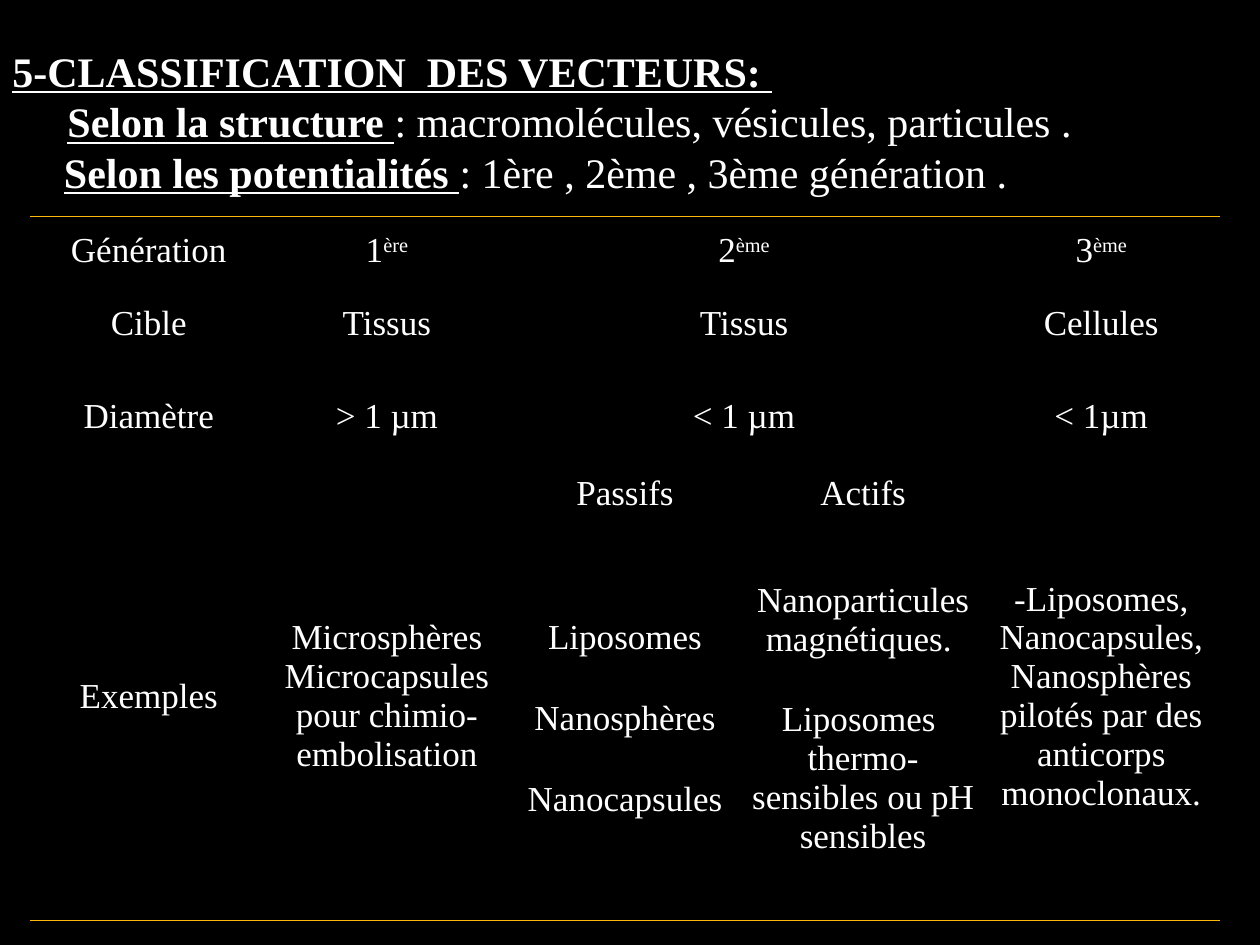
from lxml.etree import SubElement, fromstring
from pptx import Presentation
from pptx.dml.color import RGBColor
from pptx.enum.text import MSO_ANCHOR, PP_ALIGN
from pptx.oxml.ns import nsdecls, qn
from pptx.util import Pt

BLACK = RGBColor(0x00, 0x00, 0x00)
WHITE = RGBColor(0xFF, 0xFF, 0xFF)
GOLD = RGBColor(0xFE, 0xB8, 0x0A)
FONT = "Times New Roman"
PLAIN_TABLE_STYLE = "{2D5ABB26-0587-4C30-8999-92F81FD0307C}"

HEADINGS = [
    (0, "5-CLASSIFICATION  DES VECTEURS: ", ""),
    (31.5, "Selon la structure ", ": macromolécules, vésicules, particules ."),
    (29.5, "Selon les potentialités ", ": 1ère , 2ème , 3ème génération ."),
]
ROW_HEIGHTS = [39.6, 43.2, 63.36, 25.2, 231.12]
MERGES = [(0, 2, 0, 3), (1, 2, 1, 3), (2, 2, 2, 3),
          (3, 0, 4, 0), (3, 1, 4, 1), (3, 4, 4, 4)]
ROWS = [
    [["Génération"], ["1^ère"], ["2^ème"], [], ["3^ème"]],
    [["Cible"], ["Tissus"], ["Tissus"], [], ["Cellules"]],
    [["Diamètre"], ["> 1 µm"], ["< 1 µm"], [], ["< 1µm"]],
    [["Exemples"], ["Microsphères Microcapsules pour chimio-embolisation"],
     ["Passifs"], ["Actifs"],
     ["-Liposomes, Nanocapsules, Nanosphères pilotés par des anticorps monoclonaux."]],
    [[], [], ["Liposomes", "Nanosphères", "Nanocapsules"],
     ["Nanoparticules magnétiques. ", "Liposomes  thermo-sensibles ou pH sensibles"], []],
]


def add_run(paragraph, text, size, strong=False):
    """Add a white run, bold and underlined when strong."""
    run = paragraph.add_run()
    run.text = text
    font = run.font
    font.name, font.size = FONT, Pt(size)
    font.bold = font.underline = strong
    font.color.rgb = WHITE
    return run


def add_headings(slide, left, top, width, height):
    """Place the title and its two indented lines in the given box."""
    frame = slide.shapes.add_textbox(Pt(left), Pt(top), Pt(width), Pt(height)).text_frame
    frame.word_wrap = True
    for index, (indent, strong_text, plain_text) in enumerate(HEADINGS):
        paragraph = frame.add_paragraph() if index else frame.paragraphs[0]
        paragraph._p.get_or_add_pPr().set("marL", str(Pt(indent)))
        add_run(paragraph, strong_text, 24, strong=True)
        if plain_text:
            add_run(paragraph, plain_text, 24)


def add_border(cell, side):
    """Draw a thin gold line along one side of a cell."""
    line = fromstring(f'<a:{side} {nsdecls("a")} w="{Pt(1)}"/>')
    fill = SubElement(line, qn("a:solidFill"))
    SubElement(fill, qn("a:srgbClr")).set("val", str(GOLD))
    cell._tc.get_or_add_tcPr().insert(0, line)


def fill_cell(cell, texts):
    """Write centred paragraphs in a cell, raising what follows a caret."""
    cell.fill.background()
    cell.vertical_anchor = MSO_ANCHOR.MIDDLE
    cell.margin_left = cell.margin_right = Pt(2.16)
    cell.margin_top = cell.margin_bottom = 0
    frame = cell.text_frame
    for index, text in enumerate(texts):
        paragraph = frame.add_paragraph() if index else frame.paragraphs[0]
        paragraph.alignment = PP_ALIGN.CENTER
        paragraph.space_before = paragraph.space_after = Pt(12)
        base, _, raised = text.partition("^")
        add_run(paragraph, base, 20)
        if raised:
            run = add_run(paragraph, raised, 20)
            run._r.get_or_add_rPr().set("baseline", "30000")


def add_generation_table(slide, left, top, width, height):
    """Place the table of vector generations in the given box."""
    columns, last_row = len(ROWS[0]), len(ROWS) - 1
    table = slide.shapes.add_table(
        len(ROWS), columns, Pt(left), Pt(top), Pt(width), Pt(height)).table
    table.first_row = table.horz_banding = False
    table._tbl.tblPr.find(qn("a:tableStyleId")).text = PLAIN_TABLE_STYLE
    for column in table.columns:
        column.width = Pt(width / columns)
    for row, row_height in zip(table.rows, ROW_HEIGHTS):
        row.height = Pt(row_height)
    for first_row, first_column, end_row, end_column in MERGES:
        table.cell(first_row, first_column).merge(table.cell(end_row, end_column))
    for row_index, row_texts in enumerate(ROWS):
        for column_index, texts in enumerate(row_texts):
            cell = table.cell(row_index, column_index)
            fill_cell(cell, texts)
            if row_index == 0:
                add_border(cell, "lnT")
            if row_index == last_row or cell.is_merge_origin and cell.span_height > 1:
                add_border(cell, "lnB")


def main():
    """Build the slide and save it."""
    presentation = Presentation()
    presentation.slide_width, presentation.slide_height = Pt(720), Pt(540)
    slide = presentation.slides.add_slide(presentation.slide_layouts[6])
    background = slide.background.fill
    background.solid()
    background.fore_color.rgb = BLACK
    add_headings(slide, 0, 22.5, 708.5, 94.5)
    add_generation_table(slide, 17, 123.6, 680.4, sum(ROW_HEIGHTS))
    presentation.save("out.pptx")


if __name__ == "__main__":
    main()
